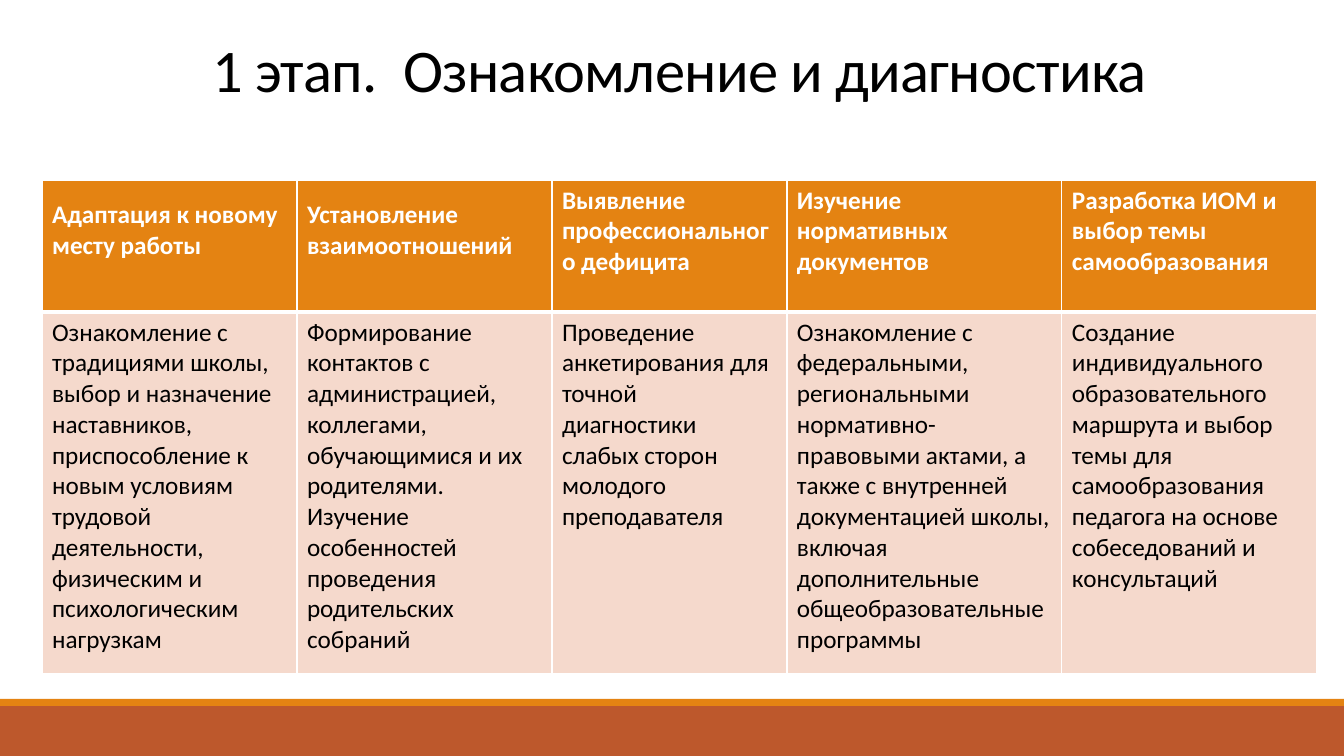
"""Slide with a five-column table on the first stage of mentoring."""
from lxml.etree import SubElement
from pptx import Presentation
from pptx.dml.color import RGBColor
from pptx.enum.shapes import MSO_SHAPE as Shape
from pptx.enum.text import MSO_ANCHOR as Anchor, PP_ALIGN as Align
from pptx.oxml import parse_xml
from pptx.oxml.ns import nsdecls, qn
from pptx.util import Pt

COLORS = {
    "rust": "BD582C",
    "orange": "E48312",
    "blush": "F5D9CC",
    "white": "FFFFFF",
    "black": "000000",
}
TITLE = "1 этап.  Ознакомление и диагностика"
STAGES = [
    (255, "Адаптация к новому месту работы",
     "Ознакомление с традициями школы, выбор и назначение наставников, "
     "приспособление к новым условиям трудовой деятельности, физическим "
     "и психологическим нагрузкам"),
    (255, "Установление взаимоотношений",
     "Формирование контактов с администрацией, коллегами, обучающимися и их "
     "родителями. Изучение особенностей проведения родительских собраний"),
    (235, "Выявление профессионального дефицита",
     "Проведение анкетирования для точной диагностики слабых сторон "
     "молодого преподавателя"),
    (275, "Изучение нормативных документов",
     "Ознакомление с федеральными, региональными нормативно-правовыми актами, "
     "а также с внутренней документацией школы, включая дополнительные "
     "общеобразовательные программы"),
    (255, "Разработка ИОМ и выбор темы самообразования",
     "Создание индивидуального образовательного маршрута и выбор темы для "
     "самообразования педагога на основе собеседований и консультаций"),
]


def px(length):
    return round(length * 914400 / 100.8)


class StageSlide:
    font = "Calibri"

    def __init__(self, page):
        self.page = page

    def color(self, name):
        return RGBColor.from_string(COLORS[name])

    def put_text(self, frame, text, size, color, bold=False):
        frame.text = text
        para = frame.paragraphs[0]
        span = para.runs[0]
        span.font.name = self.font
        span.font.size = Pt(size)
        span.font.bold = bold
        span.font.color.rgb = self.color(color)
        return para

    def band(self, top, height, color):
        bar = self.page.shapes.add_shape(
            Shape.RECTANGLE, 0, px(top), px(1344), px(height))
        bar.shadow.inherit = False
        bar.fill.solid()
        bar.fill.fore_color.rgb = self.color(color)
        bar.line.fill.background()

    def title(self, text, left, top, width, height):
        box = self.page.shapes.add_textbox(
            px(left), px(top), px(width), px(height))
        frame = box.text_frame
        frame.word_wrap = True
        frame.vertical_anchor = Anchor.TOP
        para = self.put_text(frame, text, 43.2, "black")
        para.alignment = Align.CENTER
        para.line_spacing = 0.85
        para.runs[0]._r.get_or_add_rPr().set("spc", "-50")

    def borders(self, cell, widths):
        properties = cell._tc.get_or_add_tcPr()
        for index, (side, width) in enumerate(widths.items()):
            edge = parse_xml(f'<a:ln{side} {nsdecls("a")} w="{Pt(width)}"/>')
            fill = SubElement(edge, qn("a:solidFill"))
            SubElement(fill, qn("a:srgbClr"), val=COLORS["white"])
            properties.insert(index, edge)

    def cell(self, cell, text, fill, color, bold, widths):
        self.put_text(cell.text_frame, text, 18, color, bold)
        cell.fill.solid()
        cell.fill.fore_color.rgb = self.color(fill)
        self.borders(cell, widths)

    def table(self, stages, left, top, heights):
        width = sum(stage[0] for stage in stages)
        grid = self.page.shapes.add_table(
            2, len(stages), px(left), px(top), px(width), px(sum(heights))).table
        for row, height in zip(grid.rows, heights):
            row.height = px(height)
        for index, (width, heading, details) in enumerate(stages):
            grid.columns[index].width = px(width)
            head, body = grid.cell(0, index), grid.cell(1, index)
            self.cell(head, heading, "orange", "white", True,
                      {"L": 1, "R": 1, "T": 1, "B": 3})
            head.vertical_anchor = Anchor.MIDDLE
            head.margin_bottom = px(36)
            self.cell(body, details, "blush", "black", False,
                      {"L": 1, "R": 1, "T": 3, "B": 1})


def main():
    deck = Presentation()
    deck.slide_width, deck.slide_height = px(1344), px(756)
    slide = StageSlide(deck.slides.add_slide(deck.slide_layouts[6]))
    slide.band(706, 50, "rust")
    slide.band(699, 7, "orange")
    slide.title(TITLE, 42, 38, 1275, 142)
    slide.table(STAGES, 42, 180, [132, 362])
    deck.save("out.pptx")


if __name__ == "__main__":
    main()
